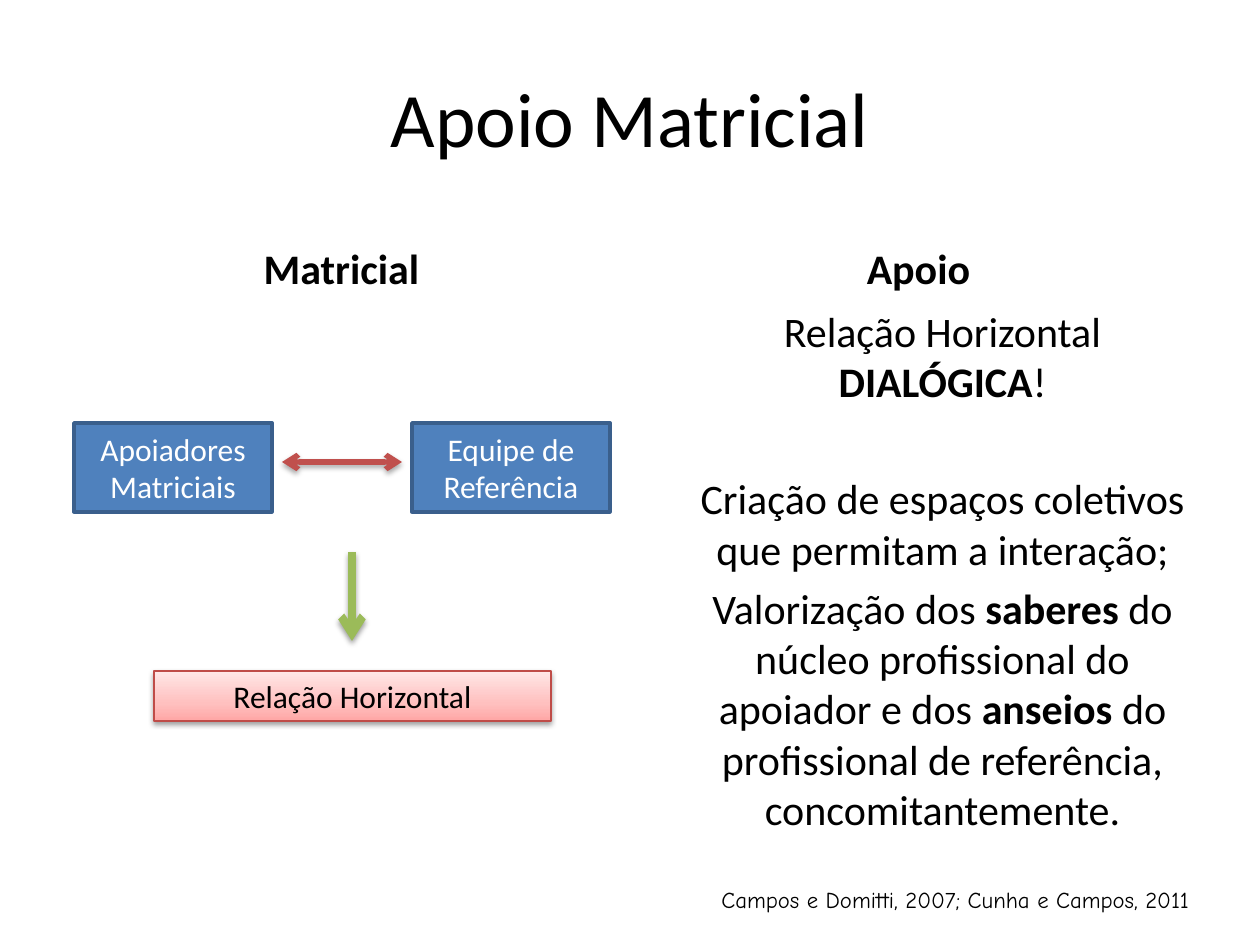
import copy
import pptx
import pptx.dml.color
import pptx.enum.shapes
import pptx.enum.text
import pptx.oxml.ns
import pptx.util
from lxml import etree

PX = 914400 / 126
ALIGN = pptx.enum.text.PP_ALIGN
ANCHOR = pptx.enum.text.MSO_ANCHOR
BLACK, WHITE = "000000", "FFFFFF"

TITLE = "Apoio Matricial"
HEADINGS = [(1, "Matricial", 63), (3, "Apoio", 640)]
# Each paragraph: space before in points, then (text, bold) spans.
POINTS = [
    (5, [("Relação Horizontal ", False), ("DIALÓGICA", True), ("!", False)]),
    (38, [("Criação de espaços coletivos que permitam a interação;", False)]),
    (5, [("Valorização dos ", False), ("saberes", True),
         (" do núcleo profissional do apoiador e dos ", False), ("anseios", True),
         (" do profissional de referência, concomitantemente.", False)]),
]
TEAMS = [("Apoiadores Matriciais", 74), ("Equipe de Referência", 412)]
RESULT = "Relação Horizontal"
RESULT_STOPS = [(0, "FFA6A5"), (0.35, "FFC0BF"), (1, "FFE7E7")]
# Start, end, colour, width, arrowheads, shadow opacity in percent, shadow distance
ARROWS = [
    ((282, 462), (402, 462), "C0504D", 3, ["headEnd", "tailEnd"], 35, 1.8),
    ((352, 552), (352, 641), "9BBB59", 4.5, ["tailEnd"], 38, 1.6),
]
CITATION = "Campos e Domitti, 2007; Cunha e Campos, 2011"


def emu(px):
    return pptx.util.Emu(round(px * PX))


def rgb(value):
    return pptx.dml.color.RGBColor.from_string(value)


def place(shape, left, top, width, height):
    shape.left, shape.top = emu(left), emu(top)
    shape.width, shape.height = emu(width), emu(height)


def style(span, size, color=BLACK, bold=False, font="Calibri"):
    span.font.size = pptx.util.Pt(size)
    span.font.name = font
    span.font.bold = bold
    span.font.color.rgb = rgb(color)


def write(shape, text, size, color=BLACK, bold=False, font="Calibri",
          align=ALIGN.CENTER, anchor=ANCHOR.MIDDLE):
    frame = shape.text_frame
    frame.text = text
    frame.word_wrap = True
    frame.auto_size = pptx.enum.text.MSO_AUTO_SIZE.NONE
    frame.vertical_anchor = anchor
    para = frame.paragraphs[0]
    para.alignment = align
    style(para.runs[0], size, color, bold, font)


def element(parent, name, **attributes):
    return etree.SubElement(parent, pptx.oxml.ns.qn("a:" + name), attributes)


def add_shadow(effects, opacity, distance):
    shadow = element(effects, "outerShdw", blurRad=str(pptx.util.Pt(3.1)),
                     dist=str(pptx.util.Pt(distance)), dir="5400000", rotWithShape="0")
    element(element(shadow, "srgbClr", val=BLACK), "alpha", val=str(opacity * 1000))


def add_box(page, text, frame, line, width, color):
    box = page.shapes.add_shape(pptx.enum.shapes.MSO_SHAPE.RECTANGLE, *map(emu, frame))
    box.line.color.rgb = rgb(line)
    box.line.width = pptx.util.Pt(width)
    box.shadow.inherit = False
    write(box, text, 18, color)
    return box


def fill_gradient(shape, stops):
    """Fill from bottom to top with the given (position, colour) stops."""
    shape.fill.gradient()
    shape.fill.gradient_angle = 90
    stop_list = shape._element.spPr.find(".//" + pptx.oxml.ns.qn("a:gsLst"))
    while len(stop_list) < len(stops):
        stop_list.append(copy.deepcopy(stop_list[0]))
    for stop, (position, color) in zip(shape.fill.gradient_stops, stops):
        stop.position = position
        stop.color.rgb = rgb(color)


def add_arrow(page, start, end, color, width, heads, opacity, distance):
    arrow = page.shapes.add_connector(
        pptx.enum.shapes.MSO_CONNECTOR.STRAIGHT, *map(emu, start + end))
    arrow.line.color.rgb = rgb(color)
    arrow.line.width = pptx.util.Pt(width)
    for head in heads:
        element(arrow.line._get_or_add_ln(), head, type="arrow")
    add_shadow(element(arrow._element.spPr, "effectLst"), opacity, distance)


def fill_points(body):
    frame = body.text_frame
    frame.word_wrap = True
    frame.auto_size = pptx.enum.text.MSO_AUTO_SIZE.NONE
    for index, (space, spans) in enumerate(POINTS):
        para = frame.add_paragraph() if index else frame.paragraphs[0]
        para.alignment = ALIGN.CENTER
        para.space_before = pptx.util.Pt(space)
        settings = para._p.get_or_add_pPr()
        settings.set("marL", str(emu(47)))
        settings.set("indent", "0")
        element(settings, "buNone")
        for text, bold in spans:
            span = para.add_run()
            span.text = text
            style(span, 24, bold=bold)


def main():
    deck = pptx.Presentation()
    deck.slide_width, deck.slide_height = emu(1260), emu(945)
    page = deck.slides.add_slide(deck.slide_layouts[4])
    holders = {holder.placeholder_format.idx: holder for holder in page.placeholders}

    place(holders[0], 63, 38, 1134, 158)
    write(holders[0], TITLE, 44)
    for index, text, left in HEADINGS:
        place(holders[index], left, 211, 557, 88)
        write(holders[index], text, 24, bold=True, anchor=ANCHOR.BOTTOM)
    place(holders[4], 640, 299, 558, 544)
    fill_points(holders[4])
    unused = holders[2]._element
    unused.getparent().remove(unused)

    for text, left in TEAMS:
        team = add_box(page, text, (left, 423, 198, 89), "3A5F8C", 2, WHITE)
        team.fill.solid()
        team.fill.fore_color.rgb = rgb("4F81BD")
    result = add_box(page, RESULT, (154, 671, 397, 50), "BF4C48", 0.75, BLACK)
    fill_gradient(result, RESULT_STOPS)
    add_shadow(result._element.spPr.find(pptx.oxml.ns.qn("a:effectLst")), 38, 1.6)
    for arrow in ARROWS:
        add_arrow(page, *arrow)

    citation = page.shapes.add_textbox(*map(emu, (709, 880, 525, 40)))
    write(citation, CITATION, 13, font="Comic Neue", align=ALIGN.LEFT, anchor=ANCHOR.TOP)
    deck.save("out.pptx")


if __name__ == "__main__":
    main()
